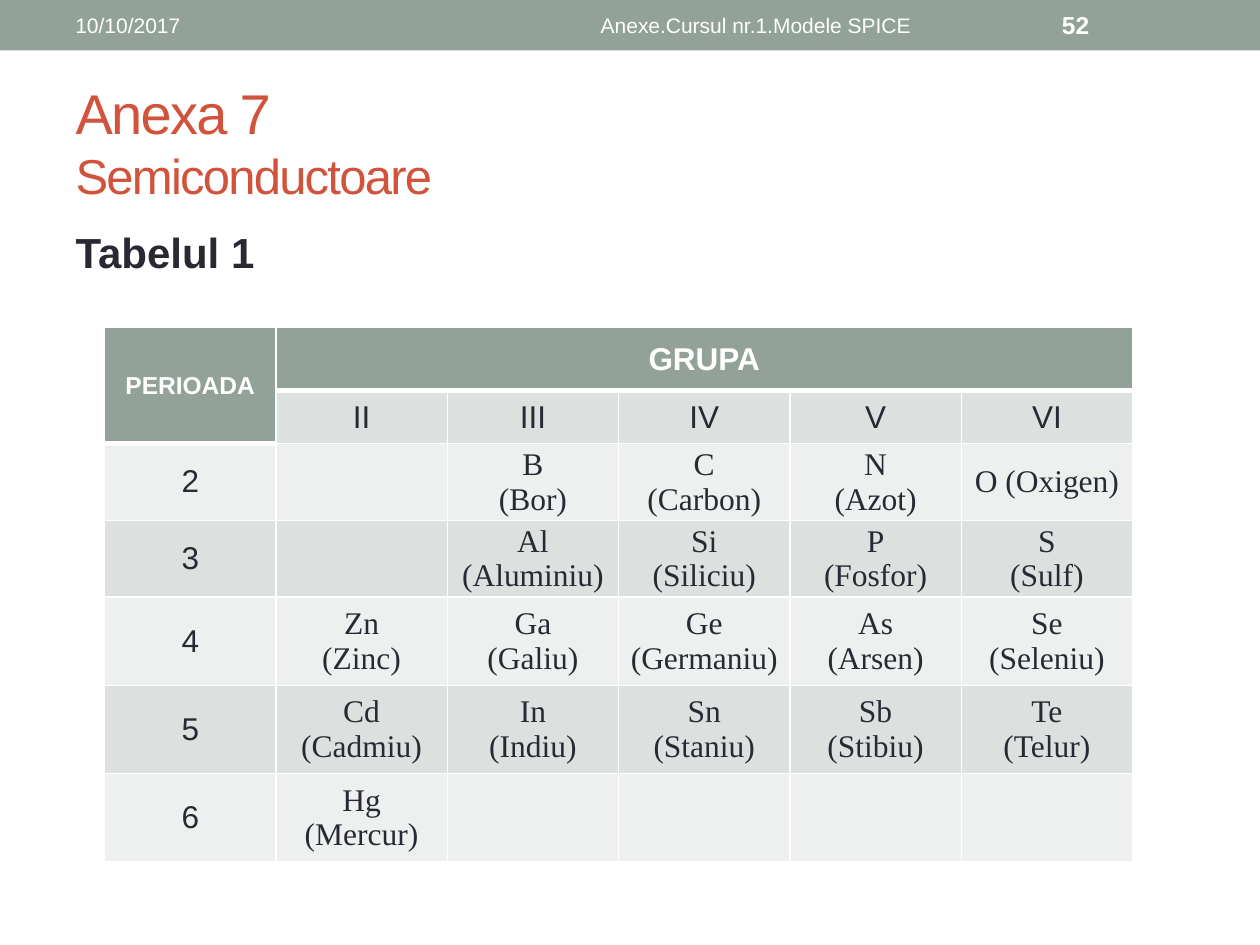
from dataclasses import dataclass

from lxml import etree
from pptx import Presentation
from pptx.dml.color import RGBColor
from pptx.enum import shapes, text
from pptx.oxml import ns
from pptx.util import Inches, Pt


@dataclass(frozen=True)
class Theme:
    sans: str = "Arial"
    serif: str = "Times New Roman"
    sage: str = "93A299"
    red: str = "D2533C"
    ink: str = "292934"
    white: str = "FFFFFF"
    band_dark: str = "DCE0DE"
    band_light: str = "EEF0EF"
    title: int = 32
    subtitle: int = 28
    body: int = 24
    cell: int = 18
    small: int = 14
    footer: int = 12


T = Theme()
GROUPS = ["II", "III", "IV", "V", "VI"]
PERIODS = {
    "2": ["", "B\n(Bor)", "C\n(Carbon)", "N\n(Azot)", "O (Oxigen)"],
    "3": ["", "Al (Aluminiu)", "Si\n(Siliciu)", "P\n(Fosfor)", "S\n(Sulf)"],
    "4": ["Zn\n(Zinc)", "Ga\n(Galiu)", "Ge (Germaniu)", "As\n(Arsen)", "Se (Seleniu)"],
    "5": ["Cd (Cadmiu)", "In\n(Indiu)", "Sn\n(Staniu)", "Sb\n(Stibiu)", "Te\n(Telur)"],
    "6": ["Hg (Mercur)", "", "", "", ""],
}
ROW_HEIGHTS = [0.5, 0.42, 0.61, 0.61, 0.7, 0.7, 0.7]
COL_WIDTH = 1.36


def set_font(font, size, color, bold=False, name=T.sans):
    font.name, font.size, font.bold = name, Pt(size), bold
    font.color.rgb = RGBColor.from_string(color)


def place(s, left, top, width, height):
    s.left, s.top = Inches(left), Inches(top)
    s.width, s.height = Inches(width), Inches(height)


def add_bar(slide):
    s = slide.shapes.add_shape(shapes.MSO_SHAPE.RECTANGLE, 0, 0, Inches(10), Inches(0.4))
    s.shadow.inherit = False
    s.fill.solid()
    s.fill.fore_color.rgb = RGBColor.from_string(T.sage)
    s.line.fill.background()


def add_bar_text(slide, words, left, width, size=T.footer, bold=False,
                 align=text.PP_ALIGN.LEFT):
    tf = slide.shapes.add_textbox(Inches(left), Inches(0.02), Inches(width),
                                  Inches(0.36)).text_frame
    tf.word_wrap = True
    tf.vertical_anchor = text.MSO_ANCHOR.MIDDLE
    p = tf.paragraphs[0]
    p.text, p.alignment = words, align
    set_font(p.font, size, T.white, bold)


def fill_title(s):
    place(s, 0.5, 0.58, 9, 1.08)
    s.text_frame.vertical_anchor = text.MSO_ANCHOR.MIDDLE
    p = s.text_frame.paragraphs[0]
    p.text = "Anexa 7\vSemiconductoare"
    p.alignment = text.PP_ALIGN.LEFT
    for r, size in zip(p.runs, (T.title, T.subtitle)):
        set_font(r.font, size, T.red)
        r.font._element.set("spc", "-100")


def fill_body(s):
    place(s, 0.5, 1.75, 9, 5.33)
    p = s.text_frame.paragraphs[0]
    p.text = "Tabelul 1"
    set_font(p.font, T.body, T.ink, bold=True)
    pPr = p._p.get_or_add_pPr()
    pPr.set("marL", str(Inches(0.2)))
    pPr.set("indent", str(Inches(-0.2)))
    pPr.insert(0, etree.Element(ns.qn("a:buNone")))


def set_borders(cell, top, bottom):
    """Draw white borders; top and bottom are widths in points."""
    tcPr = cell._tc.get_or_add_tcPr()
    sides = {"lnL": 1, "lnR": 1, "lnT": top, "lnB": bottom}
    for i, (side, width) in enumerate(sides.items()):
        ln = etree.Element(ns.qn(f"a:{side}"), w=str(Pt(width)))
        fill = etree.SubElement(ln, ns.qn("a:solidFill"))
        etree.SubElement(fill, ns.qn("a:srgbClr"), val=T.white)
        tcPr.insert(i, ln)


def fill_cell(cell, words, fill, size=T.cell, color=T.ink, bold=False,
              name=T.sans, margins=(0.1, 0.05)):
    cell.fill.solid()
    cell.fill.fore_color.rgb = RGBColor.from_string(fill)
    cell.vertical_anchor = text.MSO_ANCHOR.MIDDLE
    cell.margin_left = cell.margin_right = Inches(margins[0])
    cell.margin_top = cell.margin_bottom = Inches(margins[1])
    cell.text = words
    for p in cell.text_frame.paragraphs:
        p.alignment = text.PP_ALIGN.CENTER
        set_font(p.font, size, color, bold, name)


def add_elements_table(slide):
    cols = len(GROUPS) + 1
    table = slide.shapes.add_table(
        len(ROW_HEIGHTS), cols, Inches(0.83), Inches(2.6),
        Inches(COL_WIDTH * cols), Inches(sum(ROW_HEIGHTS))).table
    table.first_row = table.horz_banding = False
    for col in table.columns:
        col.width = Inches(COL_WIDTH)
    for row, height in zip(table.rows, ROW_HEIGHTS):
        row.height = Inches(height)

    fill_cell(table.cell(0, 0), "PERIOADA", T.sage, T.small, T.white, True)
    fill_cell(table.cell(0, 1), "GRUPA", T.sage, T.cell, T.white, True)
    for c, group in enumerate(GROUPS, 1):
        fill_cell(table.cell(1, c), group, T.band_dark)
    for r, (period, elements) in enumerate(PERIODS.items(), 2):
        band = T.band_dark if r % 2 else T.band_light
        fill_cell(table.cell(r, 0), period, band)
        for c, element in enumerate(elements, 1):
            margins = (0.1, 0.05) if c == 1 else (0.07, 0)
            fill_cell(table.cell(r, c), element, band, name=T.serif, margins=margins)

    header = {(0, c) for c in range(cols)} | {(1, 0)}
    for r in range(len(ROW_HEIGHTS)):
        for c in range(cols):
            set_borders(table.cell(r, c), top=3 if (r - 1, c) in header else 1,
                        bottom=3 if (r, c) in header else 1)
    table.cell(0, 0).merge(table.cell(1, 0))
    table.cell(0, 1).merge(table.cell(0, cols - 1))


def main():
    prs = Presentation()
    prs.slide_width, prs.slide_height = Inches(10), Inches(7.5)
    slide = prs.slides.add_slide(prs.slide_layouts[1])
    add_bar(slide)
    fill_title(slide.shapes.title)
    fill_body(slide.placeholders[1])
    add_bar_text(slide, "10/10/2017", 0.5, 3.17)
    add_bar_text(slide, "Anexe.Cursul nr.1.Modele SPICE", 3.75, 4.5,
                 align=text.PP_ALIGN.CENTER)
    add_bar_text(slide, "52", 8.33, 1.17, T.small, bold=True)
    add_elements_table(slide)
    prs.save("out.pptx")


if __name__ == "__main__":
    main()
